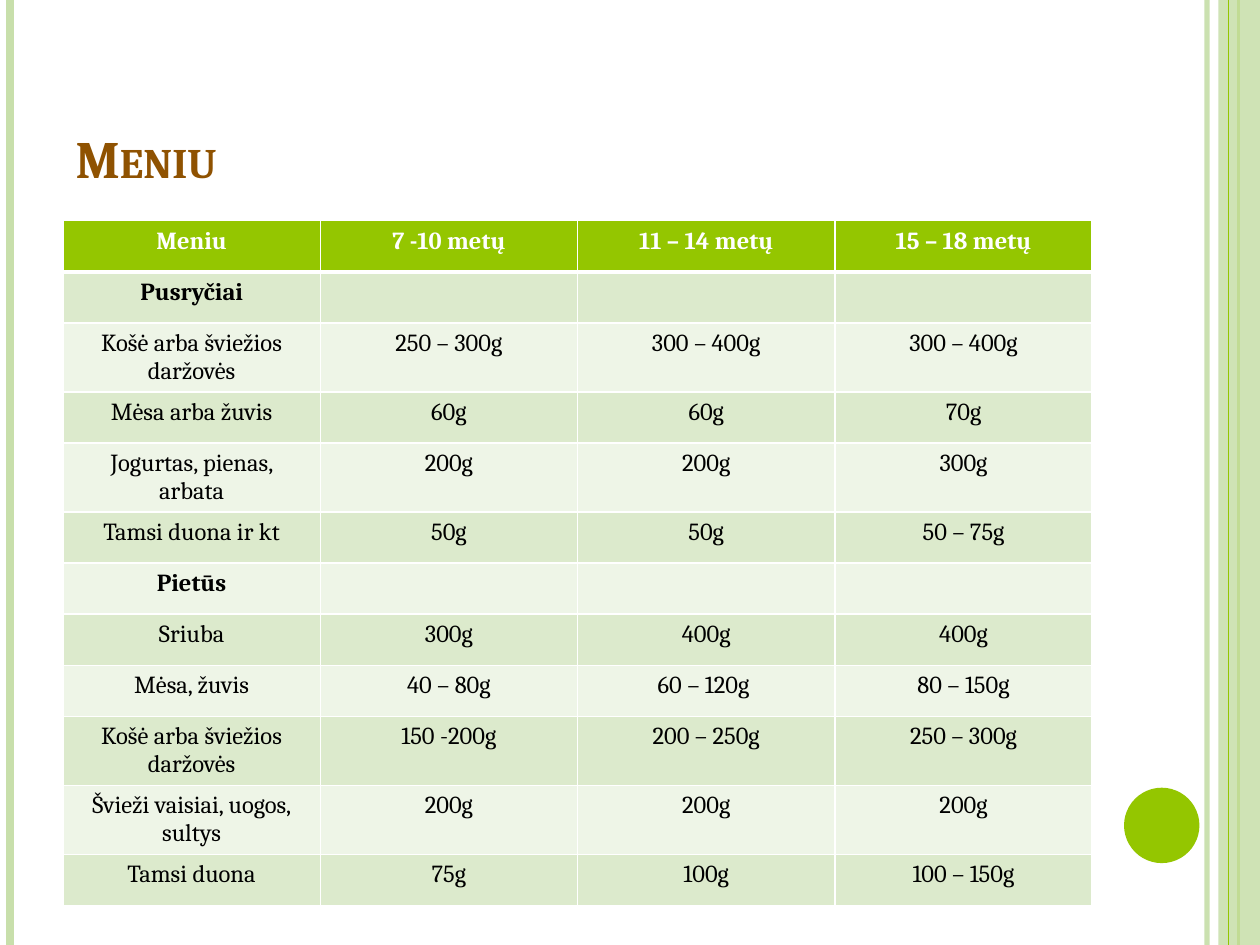
from dataclasses import dataclass

from lxml import etree
from pptx import Presentation
from pptx.dml.color import RGBColor
from pptx.enum import shapes, text
from pptx.oxml import ns
from pptx.util import Cm, Pt


@dataclass(frozen=True)
class Theme:
    font: str = "Cambria"
    accent: str = "94C600"
    pale: str = "C8DFAB"
    title: str = "8F5201"
    band_dark: str = "DCEACC"
    band_light: str = "EEF5E7"
    white: str = "FFFFFF"
    black: str = "000000"
    title_size: float = 30
    table_size: float = 14


@dataclass(frozen=True)
class Stripe:
    x: float
    color: str
    width: float
    opacity: int = 100


@dataclass(frozen=True)
class MenuRow:
    name: str
    portions: tuple = ("", "", "")
    heading: bool = False


THEME = Theme()
PAGE_WIDTH, PAGE_HEIGHT = 25.4, 19.05
LEFT, CONTENT_WIDTH = 1.27, 20.75
ROW_HEIGHT = 1.03

BACK_STRIPES = (
    Stripe(24.33, THEME.pale, 3, 93),
    Stripe(0.21, THEME.pale, 4.5),
    Stripe(24.97, THEME.accent, 1.5),
)
FRONT_STRIPE = Stripe(24.77, THEME.accent, 0.75)

MENU = (
    MenuRow("Meniu", ("7 -10 metų", "11 – 14 metų", "15 – 18 metų"), True),
    MenuRow("Pusryčiai", heading=True),
    MenuRow("Košė arba šviežios daržovės", ("250 – 300g", "300 – 400g", "300 – 400g")),
    MenuRow("Mėsa arba žuvis", ("60g", "60g", "70g")),
    MenuRow("Jogurtas, pienas, arbata", ("200g", "200g", "300g")),
    MenuRow("Tamsi duona ir kt", ("50g", "50g", "50 – 75g")),
    MenuRow("Pietūs", heading=True),
    MenuRow("Sriuba", ("300g", "400g", "400g")),
    MenuRow("Mėsa, žuvis", ("40 – 80g", "60 – 120g ", "80 – 150g")),
    MenuRow("Košė arba šviežios daržovės", ("150 -200g", "200 – 250g", "250 – 300g")),
    MenuRow("Švieži vaisiai, uogos, sultys", ("200g", "200g", "200g")),
    MenuRow("Tamsi duona", ("75g", "100g", "100 – 150g")),
)


def rgb(color: str) -> RGBColor:
    return RGBColor.from_string(color)


def set_opacity(element, percent: int) -> None:
    if percent < 100:
        color = element.find(".//" + ns.qn("a:srgbClr"))
        etree.SubElement(color, ns.qn("a:alpha"), val=str(percent * 1000))


def add_stripe(page, stripe: Stripe) -> None:
    line = page.shapes.add_connector(
        shapes.MSO_CONNECTOR.STRAIGHT,
        Cm(stripe.x), Cm(0), Cm(stripe.x), Cm(PAGE_HEIGHT),
    )
    line.line.color.rgb = rgb(stripe.color)
    line.line.width = Pt(stripe.width)
    properties = line._element.spPr
    set_opacity(properties, stripe.opacity)
    etree.SubElement(properties, ns.qn("a:effectLst"))


def add_filled(page, kind, left: float, top: float, width: float, height: float,
               color: str, opacity: int = 100) -> None:
    shape = page.shapes.add_shape(kind, Cm(left), Cm(top), Cm(width), Cm(height))
    shape.shadow.inherit = False
    shape.fill.solid()
    shape.fill.fore_color.rgb = rgb(color)
    shape.line.fill.background()
    set_opacity(shape._element.spPr, opacity)


def add_span(para, words: str, size: float, color: str, bold: bool):
    span = para.add_run()
    span.text = words
    span.font.name = THEME.font
    span.font.size = Pt(size)
    span.font.bold = bold
    span.font.color.rgb = rgb(color)
    return span


def place_title(page, words: str) -> None:
    title = page.shapes.title
    title.left, title.top = Cm(LEFT), Cm(0.76)
    title.width, title.height = Cm(CONTENT_WIDTH), Cm(3.18)
    frame = title.text_frame
    frame.word_wrap = True
    frame.vertical_anchor = text.MSO_ANCHOR.BOTTOM
    para = frame.paragraphs[0]
    para.alignment = text.PP_ALIGN.LEFT
    span = add_span(para, words, THEME.title_size, THEME.title, True)
    span.font._element.set("cap", "small")


def set_borders(cell, top: float, bottom: float) -> None:
    properties = cell._tc.get_or_add_tcPr()
    for side, width in (("L", 1), ("R", 1), ("T", top), ("B", bottom)):
        border = etree.SubElement(properties, ns.qn(f"a:ln{side}"), w=str(Pt(width)))
        fill = etree.SubElement(border, ns.qn("a:solidFill"))
        etree.SubElement(fill, ns.qn("a:srgbClr"), val=THEME.white)


def fill_cell(cell, words: str, row_index: int, bold: bool) -> None:
    header = row_index == 0
    band = THEME.band_dark if row_index % 2 else THEME.band_light
    set_borders(cell, 3 if row_index == 1 else 1, 3 if header else 1)
    cell.fill.solid()
    cell.fill.fore_color.rgb = rgb(THEME.accent if header else band)
    para = cell.text_frame.paragraphs[0]
    para.alignment = text.PP_ALIGN.CENTER
    if words:
        add_span(para, words, THEME.table_size,
                 THEME.white if header else THEME.black, bold)


def add_menu(page, menu: tuple) -> None:
    columns = 1 + len(menu[0].portions)
    table = page.shapes.add_table(
        len(menu), columns, Cm(LEFT), Cm(4.45),
        Cm(CONTENT_WIDTH), Cm(ROW_HEIGHT * len(menu)),
    ).table
    for column in table.columns:
        column.width = Cm(CONTENT_WIDTH / columns)
    for row_index, entry in enumerate(menu):
        table.rows[row_index].height = Cm(ROW_HEIGHT)
        for column_index, words in enumerate((entry.name, *entry.portions)):
            fill_cell(table.cell(row_index, column_index), words, row_index, entry.heading)


def main() -> None:
    deck = Presentation()
    deck.slide_width, deck.slide_height = Cm(PAGE_WIDTH), Cm(PAGE_HEIGHT)
    page = deck.slides.add_slide(deck.slide_layouts[5])
    for stripe in BACK_STRIPES:
        add_stripe(page, stripe)
    add_filled(page, shapes.MSO_SHAPE.RECTANGLE, 24.56, 0, 0.84, PAGE_HEIGHT, THEME.pale, 87)
    add_stripe(page, FRONT_STRIPE)
    add_filled(page, shapes.MSO_SHAPE.OVAL, 22.66, 15.88, 1.52, 1.52, THEME.accent)
    place_title(page, "Meniu")
    add_menu(page, MENU)
    deck.save("out.pptx")


if __name__ == "__main__":
    main()
